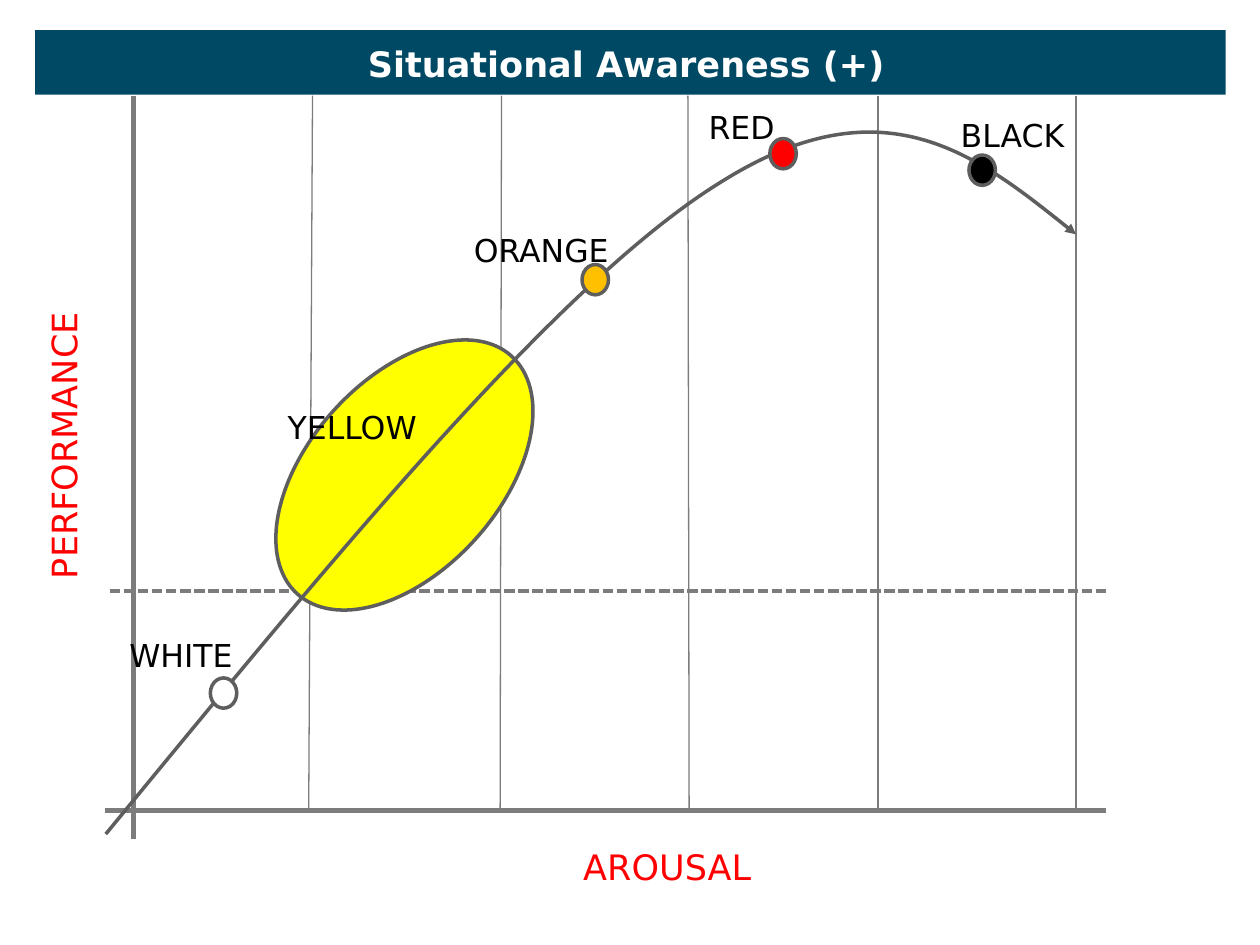
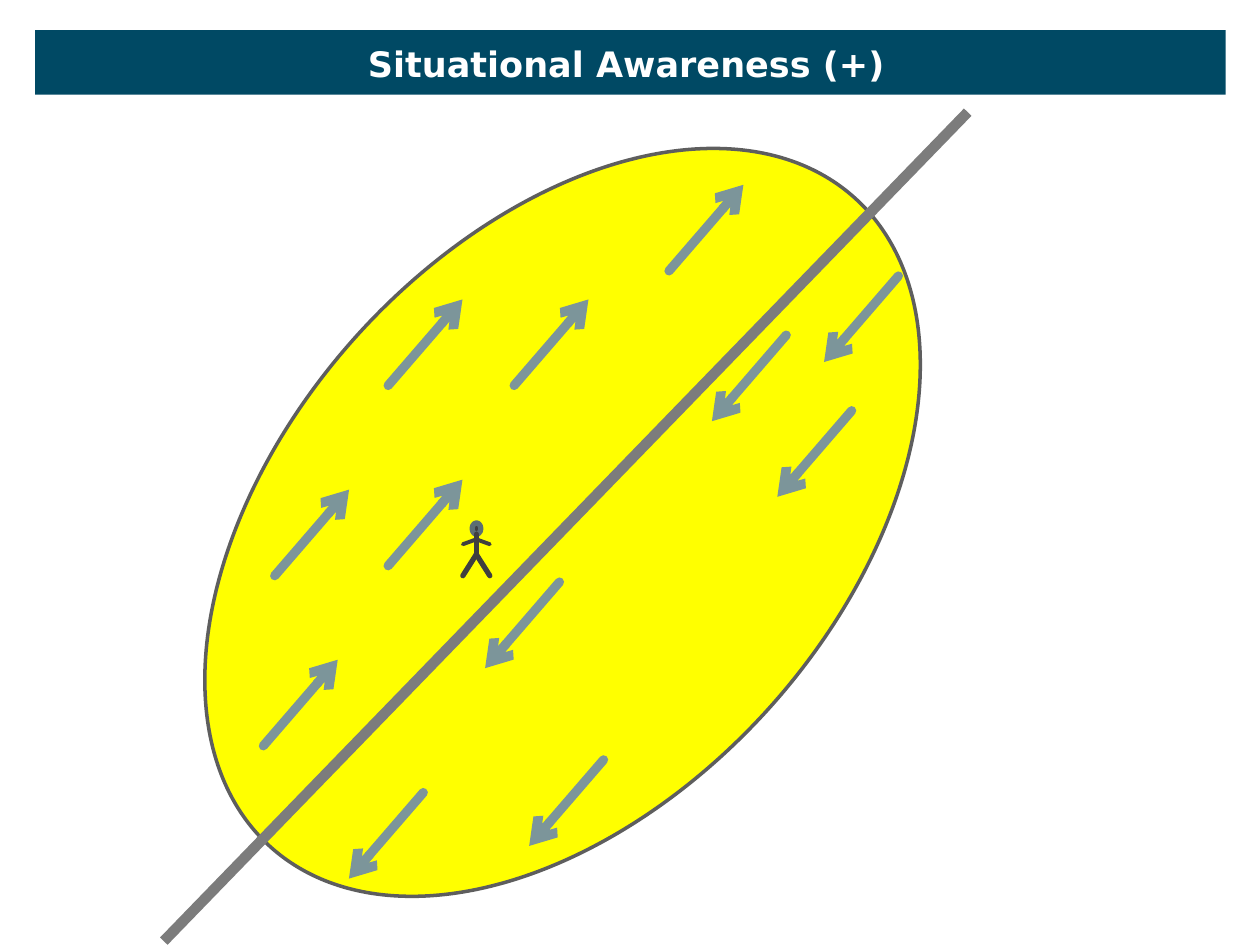
from lxml import etree
from pptx import Presentation
from pptx.dml.color import RGBColor
from pptx.enum.dml import MSO_LINE
from pptx.enum.shapes import MSO_CONNECTOR, MSO_SHAPE
from pptx.enum.text import MSO_AUTO_SIZE, PP_ALIGN
from pptx.oxml.ns import qn
from pptx.util import Pt

FONT = "DejaVu Sans"
COLORS = {
    "band": "004964", "axis": "7C7C7C", "outline": "5E5E5E", "arrow": "7C959A",
    "figure": "3F3F3F", "head": "5C6E72", "caption": "FF0000",
    "WHITE": "FFFFFF", "YELLOW": "FFFF00", "ORANGE": "FFC000",
    "RED": "FF0000", "BLACK": "000000",
}

TITLE = "Situational Awareness (+)"
AXIS_X, AXIS_Y = 76.3, 463
CHART_TOP, CHART_RIGHT = 54.7, 632.2
GRID = [(176.4, 178.6), (501.8, 501.8), (285.8, 286.6), (393.8, 393.1), (614.9, 614.9)]
CAPTIONS = [
    ("PERFORMANCE", (-110.9, 175, 294.5, 31.5), 270),
    ("AROUSAL", (326.2, 479.5, 155.5, 31.5), 0),
]
LABEL_SIZE = (101.5, 29)
LABELS = {
    "WHITE": (52.6, 360), "ORANGE": (258.5, 128.2), "RED": (373, 58.3),
    "BLACK": (527.8, 62.6),
}
YELLOW_LABEL = (150.5, 229.7)
DOT_SIZE = (15.1, 17.3)
DOTS = {
    "ORANGE": (332.6, 151.2), "RED": (439.9, 79.2), "BLACK": (553.7, 88.6),
    "WHITE": (120.2, 387.4),
}
CURVE_START = (60.5, 476.6)
CURVE_APEX = (496, 76.3)
CURVE = [
    [(190.1, 319), (319.7, 160.6), (412.6, 103.7)],
    [(504.7, 46.1), (560.2, 90), (614.9, 133.9)],
]

SMALL_ZONE = (176.4, 180, 109.4, 182.9)
LARGE_ZONE = (162.7, 49, 317.5, 499)
ZONE_TILT = 42
DIVIDER = [(93.6, 537.8), (553, 64.1)]
ARROW_STEP = (42.5, -49.2)
RISING = [(150.5, 426.2), (221.8, 220.3), (293.8, 220.3), (157, 329),
          (221.8, 323.3), (382.3, 154.8)]
FALLING = [(319.7, 332.6), (241.9, 452.9), (513.4, 157.7), (344.9, 434.2),
           (486.7, 234.7), (449.3, 191.5)]
HEAD = (269.8, 298.8, 5, 6.5)
NECK, SHOULDER, HIP = (272.2, 305.3), (272.2, 308.2), (272.2, 316.8)
HANDS_Y, FEET_Y, REACH = 311, 329, 7.7


def rgb(name):
    return RGBColor.from_string(COLORS[name])


def pts(values):
    return [Pt(v) for v in values]


def style_line(line, color, width, head=None, cap=None):
    line.color.rgb = rgb(color)
    line.width = Pt(width)
    ln = line._get_or_add_ln()
    if cap:
        ln.set("cap", cap)
    if head:
        etree.SubElement(ln, qn("a:tailEnd"), type=head)


def add_line(slide, start, end, color, width, dash=None, head=None, cap=None):
    cxn = slide.shapes.add_connector(MSO_CONNECTOR.STRAIGHT, *pts(start + end))
    if dash:
        cxn.line.dash_style = dash
    style_line(cxn.line, color, width, head, cap)
    etree.SubElement(cxn._element.spPr, qn("a:effectLst"))


def add_shape(slide, kind, box, fill, outline=None, width=2, tilt=0):
    sp = slide.shapes.add_shape(kind, *pts(box))
    sp.shadow.inherit = False
    sp.rotation = tilt
    sp.fill.solid()
    sp.fill.fore_color.rgb = rgb(fill)
    if outline:
        style_line(sp.line, outline, width)
    else:
        sp.line.fill.background()


def add_text(slide, text, box, size, color, align=PP_ALIGN.CENTER, bold=False,
             wrap=True, tilt=0):
    sp = slide.shapes.add_textbox(*pts(box))
    sp.rotation = tilt
    tf = sp.text_frame
    tf.word_wrap = wrap
    tf.auto_size = MSO_AUTO_SIZE.SHAPE_TO_FIT_TEXT
    p = tf.paragraphs[0]
    p.alignment = align
    r = p.add_run()
    r.text = text
    r.font.name = FONT
    r.font.size = Pt(size)
    r.font.bold = bold
    r.font.color.rgb = rgb(color)


def add_label(slide, name, at):
    add_text(slide, name, at + LABEL_SIZE, 18, "BLACK")


def add_zone(slide, box):
    add_shape(slide, MSO_SHAPE.OVAL, box, "YELLOW", "outline", tilt=ZONE_TILT)


def add_curve(slide):
    fb = slide.shapes.build_freeform(*pts(CURVE_START), scale=1.0)
    fb.add_line_segments([pts(p) for p in (CURVE_APEX, CURVE[-1][-1])], close=False)
    sp = fb.convert_to_shape()
    path = sp._element.spPr.find(".//" + qn("a:path"))
    for seg in path.findall(qn("a:lnTo")):
        path.remove(seg)
    for seg in CURVE:
        bezier = etree.SubElement(path, qn("a:cubicBezTo"))
        for x, y in seg:
            etree.SubElement(bezier, qn("a:pt"), x=str(Pt(x) - sp.left),
                             y=str(Pt(y) - sp.top))
    sp.shadow.inherit = False
    sp.fill.background()
    style_line(sp.line, "outline", 2, "triangle")


def new_slide(prs):
    slide = prs.slides.add_slide(prs.slide_layouts[6])
    add_shape(slide, MSO_SHAPE.RECTANGLE, (20, 17.3, 680.4, 36.9), "band")
    add_text(slide, TITLE, (200.2, 21, 315.4, 31.5), 20, "WHITE", bold=True, wrap=False)
    return slide


def build_arousal_slide(prs):
    slide = new_slide(prs)
    add_line(slide, (AXIS_X, CHART_TOP), (AXIS_X, 479.5), "axis", 3)
    add_line(slide, (59.8, AXIS_Y), (CHART_RIGHT, AXIS_Y), "axis", 3)
    for text, box, tilt in CAPTIONS:
        add_text(slide, text, box, 20, "caption", PP_ALIGN.LEFT, tilt=tilt)
    add_line(slide, (62.6, 337.8), (CHART_RIGHT, 337.8), "axis", 2,
             dash=MSO_LINE.SQUARE_DOT)
    for bottom, top in GRID:
        add_line(slide, (bottom, AXIS_Y), (top, CHART_TOP), "axis", 0.75)
    for name, at in LABELS.items():
        add_label(slide, name, at)
    add_zone(slide, SMALL_ZONE)
    add_label(slide, "YELLOW", YELLOW_LABEL)
    add_curve(slide)
    for name, at in DOTS.items():
        add_shape(slide, MSO_SHAPE.FLOWCHART_CONNECTOR, at + DOT_SIZE, name, "outline")


def build_zone_slide(prs):
    slide = new_slide(prs)
    add_zone(slide, LARGE_ZONE)
    add_line(slide, *DIVIDER, "axis", 6)
    dx, dy = ARROW_STEP
    for starts, sign in ((RISING, 1), (FALLING, -1)):
        for x, y in starts:
            add_line(slide, (x, y), (x + sign * dx, y + sign * dy), "arrow", 5.25,
                     head="arrow", cap="rnd")
    add_shape(slide, MSO_SHAPE.FLOWCHART_CONNECTOR, HEAD, "figure", "head", 3)
    add_line(slide, NECK, HIP, "figure", 3, cap="rnd")
    for joint, y, width in ((SHOULDER, HANDS_Y, 2.25), (HIP, FEET_Y, 3)):
        for side in (-1, 1):
            add_line(slide, joint, (joint[0] + side * REACH, y), "figure", width, cap="rnd")


def main():
    prs = Presentation()
    prs.slide_width, prs.slide_height = Pt(720), Pt(540)
    build_arousal_slide(prs)
    build_zone_slide(prs)
    prs.save("out.pptx")


if __name__ == "__main__":
    main()
